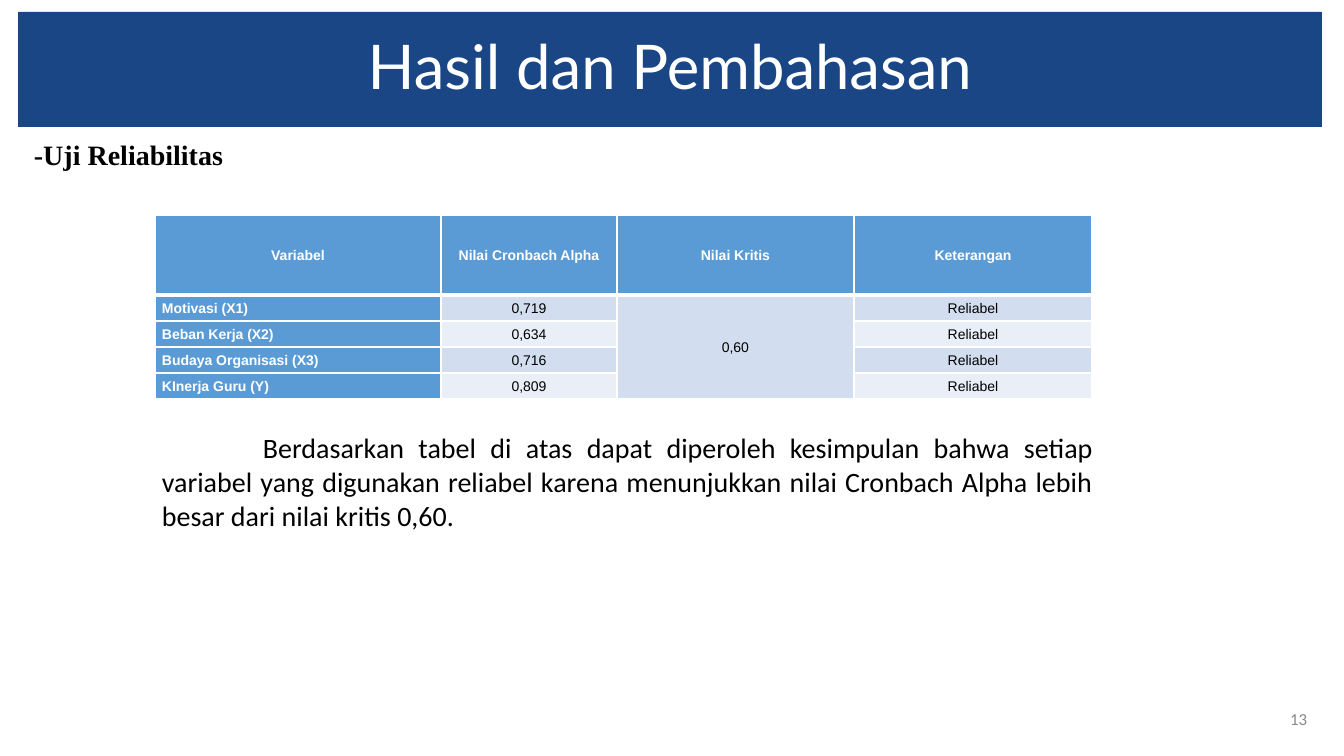
import pptx
import pptx.util
import pptx.dml.color
import pptx.enum.shapes
import pptx.enum.text
import pptx.oxml.ns
import lxml.etree

THEME = {
    "navy": "1B4685", "blue": "5B9BD5", "band_dark": "D2DEEF", "band_light": "EAEFF7",
    "white": "FFFFFF", "black": "000000", "gray": "888888",
    "title_size": 44, "body_size": 20, "number_size": 12, "table_size": 10,
}
PX = 914400 / 100.8
ALIGN = pptx.enum.text.PP_ALIGN
MIDDLE = pptx.enum.text.MSO_ANCHOR.MIDDLE


def px(*lengths):
    return [pptx.util.Emu(round(length * PX)) for length in lengths]


def write(frame, text, font, size, color, align, bold=False, spacing=None):
    frame.word_wrap = True
    paragraph = frame.paragraphs[0]
    paragraph.alignment = align
    paragraph.line_spacing = spacing
    run = paragraph.add_run()
    run.text = text
    run.font.name = font
    run.font.size = pptx.util.Pt(THEME[size])
    run.font.bold = bold
    run.font.color.rgb = pptx.dml.color.RGBColor.from_string(THEME[color])
    return paragraph


presentation = pptx.Presentation()
presentation.slide_width, presentation.slide_height = px(1344, 756)
slide = presentation.slides.add_slide(presentation.slide_layouts[6])

number = slide.shapes.add_textbox(*px(1260, 699, 57, 40)).text_frame
number.vertical_anchor = MIDDLE
write(number, "13", "Calibri", "number_size", "gray", ALIGN.RIGHT)

banner = slide.shapes.add_shape(pptx.enum.shapes.MSO_SHAPE.RECTANGLE, *px(18, 12, 1304, 115))
banner.shadow.inherit = False
banner.fill.solid()
banner.fill.fore_color.rgb = pptx.dml.color.RGBColor.from_string(THEME["navy"])
banner.line.fill.background()
banner.text_frame.vertical_anchor = MIDDLE
write(banner.text_frame, "Hasil dan Pembahasan", "Lato", "title_size", "white", ALIGN.CENTER, spacing=0.9)

heading = slide.shapes.add_textbox(*px(18, 136, 267, 80)).text_frame
paragraph = write(heading, "-Uji Reliabilitas", "Times New Roman", "body_size", "black",
                  ALIGN.LEFT, bold=True, spacing=0.9)
paragraph._p.get_or_add_pPr().set("marL", str(px(6)[0]))

rows = [
    ["Variabel", "Nilai Cronbach Alpha", "Nilai Kritis", "Keterangan"],
    ["Motivasi (X1)", "0,719", "0,60", "Reliabel"],
    ["Beban Kerja (X2)", "0,634", "", "Reliabel"],
    ["Budaya Organisasi (X3)", "0,716", "", "Reliabel"],
    ["KInerja Guru (Y)", "0,809", "", "Reliabel"],
]
column_widths = px(286, 176, 237, 238)
row_heights = px(80, 26, 26, 26, 26)
table = slide.shapes.add_table(5, 4, *px(155, 215, 937, 184)).table
for column, width in zip(table.columns, column_widths):
    column.width = width
for row, height in zip(table.rows, row_heights):
    row.height = height
table.cell(1, 2).merge(table.cell(4, 2))

for row_index, row in enumerate(rows):
    for column_index, text in enumerate(row):
        cell = table.cell(row_index, column_index)
        is_header = row_index == 0 or column_index == 0
        cell.margin_left, cell.margin_right, cell.margin_top, cell.margin_bottom = px(7, 7, 0, 0)
        cell.vertical_anchor = MIDDLE
        properties = cell._tc.get_or_add_tcPr()
        for side in "LRTB":
            heavy = (row_index, side) in [(0, "B"), (1, "T")]
            border = lxml.etree.SubElement(properties, pptx.oxml.ns.qn(f"a:ln{side}"),
                                           w=str(pptx.util.Pt(3 if heavy else 1)))
            fill = lxml.etree.SubElement(border, pptx.oxml.ns.qn("a:solidFill"))
            lxml.etree.SubElement(fill, pptx.oxml.ns.qn("a:srgbClr"), val=THEME["white"])
        band = "band_dark" if row_index % 2 or column_index == 2 else "band_light"
        cell.fill.solid()
        cell.fill.fore_color.rgb = pptx.dml.color.RGBColor.from_string(THEME["blue" if is_header else band])
        if text:
            align = ALIGN.JUSTIFY if column_index == 0 and row_index else ALIGN.CENTER
            write(cell.text_frame, text, "Arial", "table_size", "white" if is_header else "black",
                  align, bold=is_header, spacing=1.07)

conclusion = slide.shapes.add_textbox(*px(152, 426, 951, 112)).text_frame
paragraph = write(
    conclusion,
    "Berdasarkan tabel di atas dapat diperoleh kesimpulan bahwa setiap variabel yang digunakan "
    "reliabel karena menunjukkan nilai Cronbach Alpha lebih besar dari nilai kritis 0,60.",
    "Calibri", "body_size", "black", ALIGN.JUSTIFY)
paragraph._p.get_or_add_pPr().set("indent", str(px(101)[0]))

presentation.save("out.pptx")
